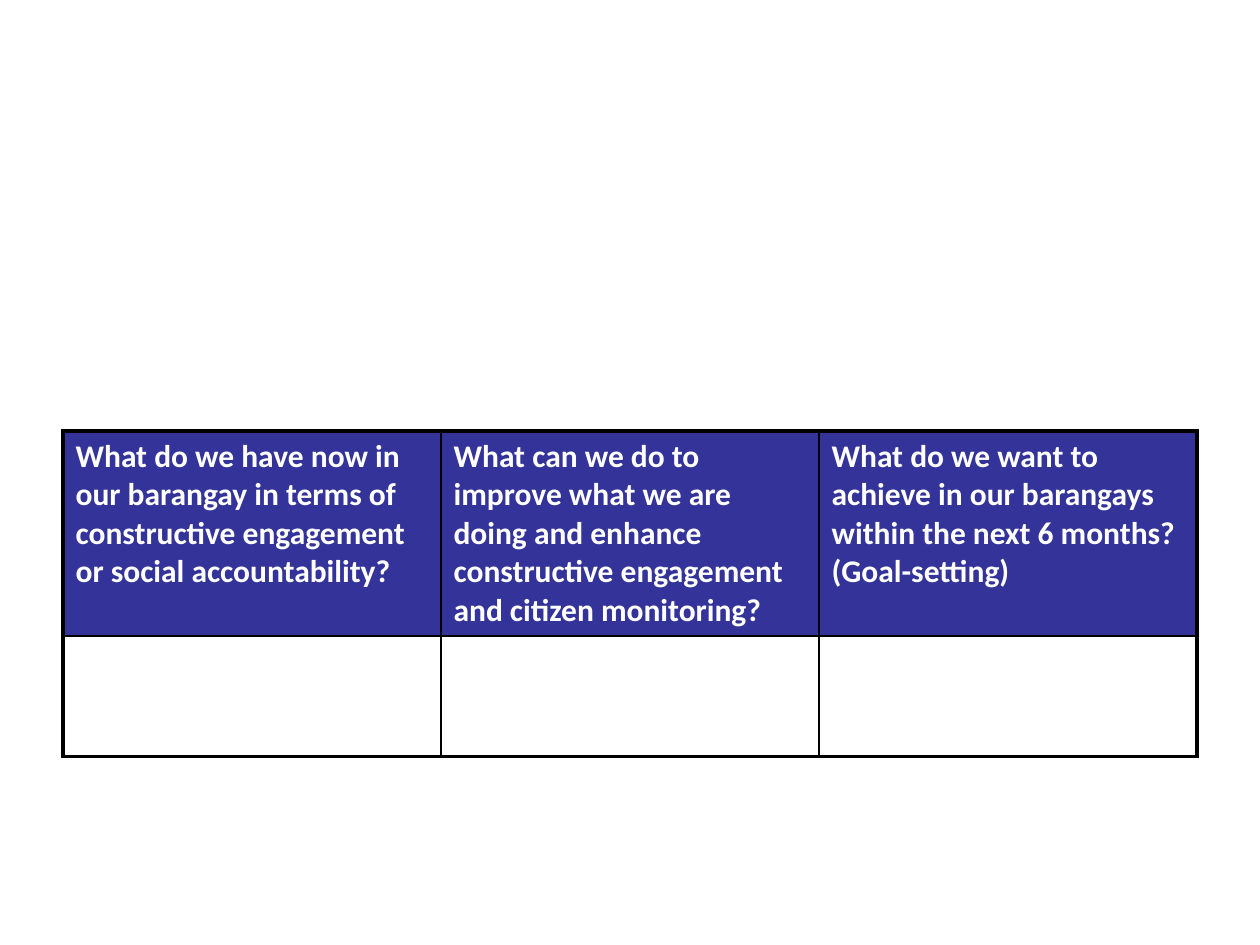
from lxml.etree import SubElement
from pptx import Presentation
from pptx.dml.color import RGBColor
from pptx.oxml.ns import qn
from pptx.util import Inches, Pt

BLACK = RGBColor(0x00, 0x00, 0x00)
WHITE = RGBColor(0xFF, 0xFF, 0xFF)
NAVY = RGBColor(0x33, 0x33, 0x99)
OUTER_WIDTH = Pt(2.25)
INNER_WIDTH = Pt(1)
ROW_HEIGHTS = (1.6, 0.96)
QUESTIONS = (
    "What do we have now in our barangay in terms of constructive engagement "
    "or social accountability?",
    "What can we do to improve what we are doing and enhance constructive "
    "engagement and citizen monitoring?",
    "What do we want to achieve in our barangays within the next 6 months? "
    "(Goal-setting)",
)


def write_text(text_frame, text, size=18, color=BLACK, bold=False, font="Calibri"):
    """Write one formatted paragraph into a text frame."""
    paragraph = text_frame.paragraphs[0]
    run = paragraph.add_run()
    run.text = text
    run.font.name = font
    run.font.size = Pt(size)
    run.font.bold = bold
    run.font.color.rgb = color


def add_border(cell, side, width, color=BLACK):
    """Draw a solid border on one side of a cell."""
    properties = cell._tc.get_or_add_tcPr()
    line = SubElement(properties, qn(f"a:ln{side}"), w=str(int(width)))
    fill = SubElement(line, qn("a:solidFill"))
    SubElement(fill, qn("a:srgbClr"), val=str(color))


def format_cell(cell, row, column, last_row, last_column):
    """Give a cell its borders, thick on the table's edge, and its fill."""
    edges = {
        "L": column == 0,
        "R": column == last_column,
        "T": row == 0,
        "B": row == last_row,
    }
    for side, is_outer in edges.items():
        add_border(cell, side, OUTER_WIDTH if is_outer else INNER_WIDTH)
    if row == 0:
        cell.fill.solid()
        cell.fill.fore_color.rgb = NAVY
    else:
        cell.fill.background()


def add_question_table(slide):
    """Add the planning table with a row of questions and a row for answers."""
    row_count, column_count = len(ROW_HEIGHTS), len(QUESTIONS)
    table = slide.shapes.add_table(
        row_count, column_count,
        Inches(0.5), Inches(3.42), Inches(9), Inches(sum(ROW_HEIGHTS)),
    ).table
    table.horz_banding = False
    table.first_row = False
    for row, height in enumerate(ROW_HEIGHTS):
        table.rows[row].height = Inches(height)
        for column in range(column_count):
            format_cell(table.cell(row, column), row, column,
                        row_count - 1, column_count - 1)
    for column, question in enumerate(QUESTIONS):
        write_text(table.cell(0, column).text_frame, question,
                   color=WHITE, bold=True)


def main():
    """Build and save the presentation."""
    presentation = Presentation()
    presentation.slide_width = Inches(10)
    presentation.slide_height = Inches(7.5)
    slide = presentation.slides.add_slide(presentation.slide_layouts[6])
    add_question_table(slide)
    presentation.save("out.pptx")


if __name__ == "__main__":
    main()
